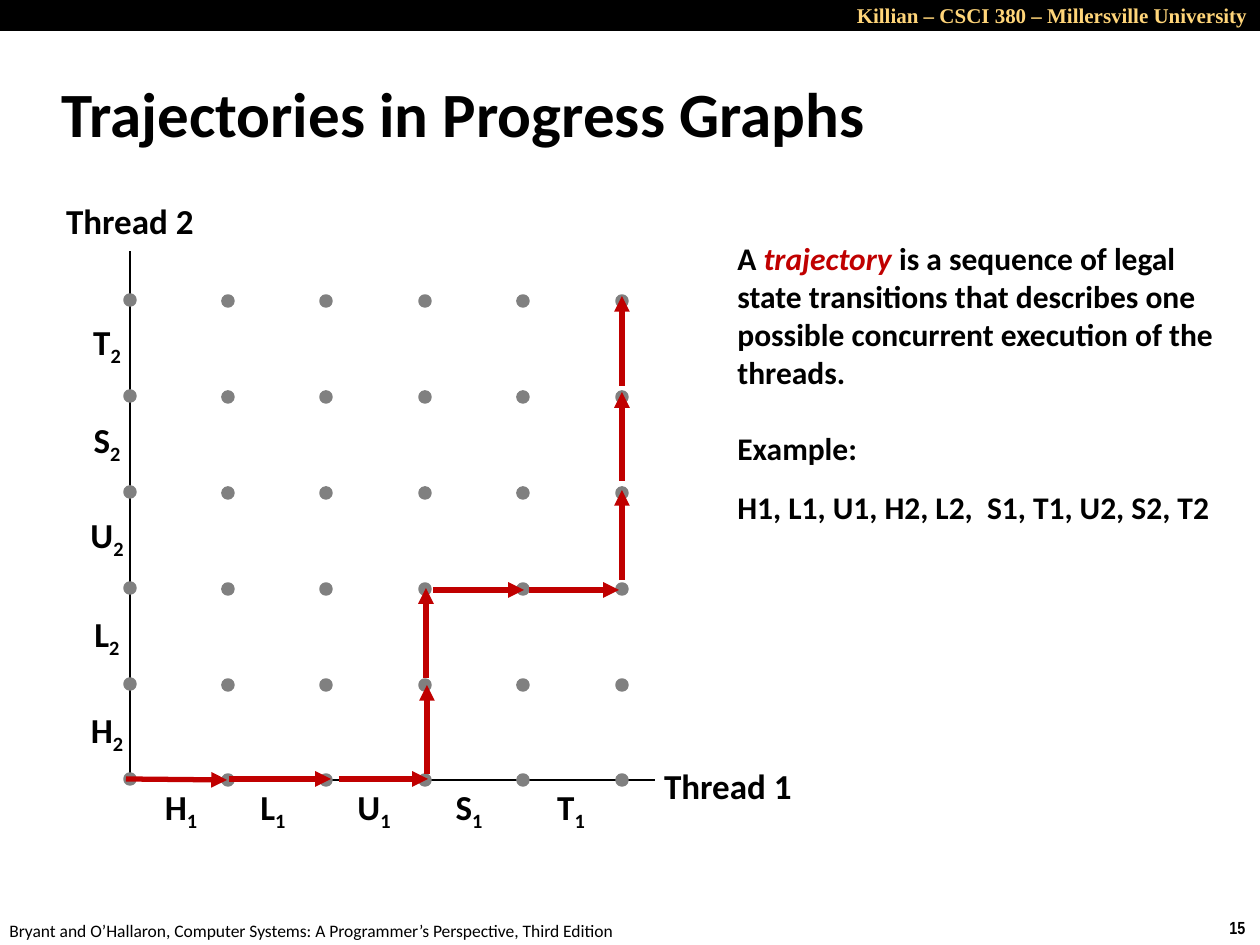
from dataclasses import dataclass

from lxml.etree import SubElement
from pptx import Presentation
from pptx.dml.color import RGBColor
from pptx.enum.shapes import MSO_CONNECTOR, MSO_SHAPE
from pptx.enum.text import MSO_ANCHOR, MSO_AUTO_SIZE, PP_ALIGN
from pptx.oxml.ns import qn
from pptx.util import Pt

EMU_PER_PX = 914400 / 126


@dataclass(frozen=True)
class Theme:
    black: str = "000000"
    white: str = "FFFFFF"
    gold: str = "FFD579"
    red: str = "C00000"
    gray: str = "808080"
    font: str = "Calibri"
    header_font: str = "Times New Roman"
    number_font: str = "Arial Narrow"
    title: int = 36
    label: int = 20
    body: int = 18
    header: int = 12
    footer: int = 10


THEME = Theme()

# Grid of states: origin, full extent and number of steps
ORIGIN_X, ORIGIN_Y = 130, 780
EXTENT_X, EXTENT_Y, STEPS = 492, 479, 5
DOT = 10

# Step names with label widths, and label centres along each axis
STEP_WIDTHS = {"H": 59, "L": 53, "U": 60, "S": 54, "T": 55}
THREAD_1_CENTERS = (181, 273, 374, 469, 571)
THREAD_2_CENTERS = (732, 636, 537, 442, 344)
LABEL_HEIGHT = 55

# Trajectory: x1, y1, x2, y2 of each transition
TRANSITIONS = (
    (126, 779, 227, 780), (229, 779, 331, 779), (339, 779, 428, 779),  # H1 L1 U1
    (427, 774, 427, 685), (426, 678, 426, 588),                        # H2 L2
    (433, 590, 524, 590), (529, 590, 619, 590),                        # S1 T1
    (622, 580, 622, 490), (622, 481, 622, 392), (622, 386, 622, 296),  # U2 S2 T2
)


def px(*lengths):
    return [round(n * EMU_PER_PX) for n in lengths]


def rgb(color):
    return RGBColor.from_string(color)


def add_run(p, text, size, color=THEME.black, baseline=None, **fmt):
    r = p.add_run()
    r.text = text
    r.font.size = Pt(size)
    r.font.color.rgb = rgb(color)
    for name, value in {"name": THEME.font, "bold": True, **fmt}.items():
        setattr(r.font, name, value)
    if baseline:
        r.font._element.set("baseline", str(baseline))


def add_frame(shapes, box, align=PP_ALIGN.LEFT, **fmt):
    """Add a text box and return its text frame."""
    tf = shapes.add_textbox(*px(*box)).text_frame
    defaults = {"word_wrap": True, "vertical_anchor": MSO_ANCHOR.MIDDLE,
                "auto_size": MSO_AUTO_SIZE.SHAPE_TO_FIT_TEXT}
    for name, value in {**defaults, **fmt}.items():
        setattr(tf, name, value)
    tf.paragraphs[0].alignment = align
    return tf


def add_label(shapes, cx, cy, width, text, subscript=""):
    box = (cx - width / 2, cy - LABEL_HEIGHT / 2, width, LABEL_HEIGHT)
    p = add_frame(shapes, box, PP_ALIGN.CENTER, word_wrap=False).paragraphs[0]
    add_run(p, text, THEME.label)
    if subscript:
        add_run(p, subscript, THEME.label, baseline=-25000)


def add_shape(shapes, kind, box, color, line_width=0):
    sp = shapes.add_shape(kind, *px(*box))
    sp.shadow.inherit = False
    sp.fill.solid()
    sp.fill.fore_color.rgb = rgb(color)
    if line_width:
        sp.line.color.rgb = rgb(color)
        sp.line.width = Pt(line_width)
    else:
        sp.line.fill.background()


def add_line(shapes, ends, color, width, arrow=False):
    line = shapes.add_connector(MSO_CONNECTOR.STRAIGHT, *px(*ends))
    line.line.color.rgb = rgb(color)
    line.line.width = Pt(width)
    if arrow:
        SubElement(line.line._get_or_add_ln(), qn("a:tailEnd"), type="triangle")
    SubElement(line._element.spPr, qn("a:effectLst"))


def add_furniture(shapes):
    # Page number and source
    tf = add_frame(shapes, (1217, 911, 43, 34), word_wrap=False,
                   vertical_anchor=MSO_ANCHOR.TOP)
    add_run(tf.paragraphs[0], "15", THEME.footer, name=THEME.number_font)
    tf = add_frame(shapes, (-3, 914, 640, 34), word_wrap=False,
                   vertical_anchor=MSO_ANCHOR.TOP)
    add_run(tf.paragraphs[0], "Bryant and O’Hallaron, Computer Systems: "
            "A Programmer’s Perspective, Third Edition", THEME.footer, bold=False)
    # Header band
    add_shape(shapes, MSO_SHAPE.RECTANGLE, (0, 0, 1260, 31), THEME.black)
    tf = add_frame(shapes, (567, -4, 693, 38), PP_ALIGN.RIGHT,
                   vertical_anchor=MSO_ANCHOR.TOP)
    add_run(tf.paragraphs[0], "Killian – CSCI 380 – Millersville University",
            THEME.header, THEME.gold, name=THEME.header_font)


def add_explanation(shapes):
    tf = add_frame(shapes, (725, 232, 525, 301))
    p = tf.paragraphs[0]
    add_run(p, "A ", THEME.body)
    add_run(p, "trajectory", THEME.body, THEME.red, italic=True)
    add_run(p, " is a sequence of legal state transitions that describes one "
            "possible concurrent execution of the threads.", THEME.body)
    for text, space in (("Example:", 22),
                        ("H1, L1, U1, H2, L2,  S1, T1, U2, S2, T2", 12)):
        p = tf.add_paragraph()
        p.space_before = Pt(space)
        add_run(p, text, THEME.body)


def add_axes(shapes):
    for end in ((655, ORIGIN_Y), (ORIGIN_X, 251)):
        add_line(shapes, (ORIGIN_X, ORIGIN_Y, *end), THEME.black, 1)
    for (step, width), x in zip(STEP_WIDTHS.items(), THREAD_1_CENTERS):
        add_label(shapes, x, 809, width, step, "1")
    for (step, width), y in zip(STEP_WIDTHS.items(), THREAD_2_CENTERS):
        add_label(shapes, 107, y, width, step, "2")
    add_label(shapes, 728, 785, 154, "Thread 1")
    add_label(shapes, 130, 220, 154, "Thread 2")


def add_states(shapes):
    for col in range(STEPS + 1):
        group = shapes.add_group_shape().shapes
        x = ORIGIN_X + EXTENT_X * col // STEPS - DOT // 2
        base = ORIGIN_Y - (1 if col == 0 else 0)
        for row in range(STEPS + 1):
            y = base - EXTENT_Y * row // STEPS - DOT // 2
            add_shape(group, MSO_SHAPE.OVAL, (x, y, DOT, DOT), THEME.gray, 2)


def main():
    prs = Presentation()
    prs.slide_width, prs.slide_height = px(1260, 945)
    s = prs.slides.add_slide(prs.slide_layouts[6])
    s.background.fill.solid()
    s.background.fill.fore_color.rgb = rgb(THEME.white)

    add_furniture(s.shapes)
    # Title
    tf = add_frame(s.shapes, (49, 60, 1046, 105), auto_size=MSO_AUTO_SIZE.NONE)
    add_run(tf.paragraphs[0], "Trajectories in Progress Graphs", THEME.title)
    add_explanation(s.shapes)

    # Progress graph
    add_axes(s.shapes)
    add_states(s.shapes)
    for ends in TRANSITIONS:
        add_line(s.shapes, ends, THEME.red, 3, arrow=True)

    prs.save("out.pptx")


if __name__ == "__main__":
    main()
